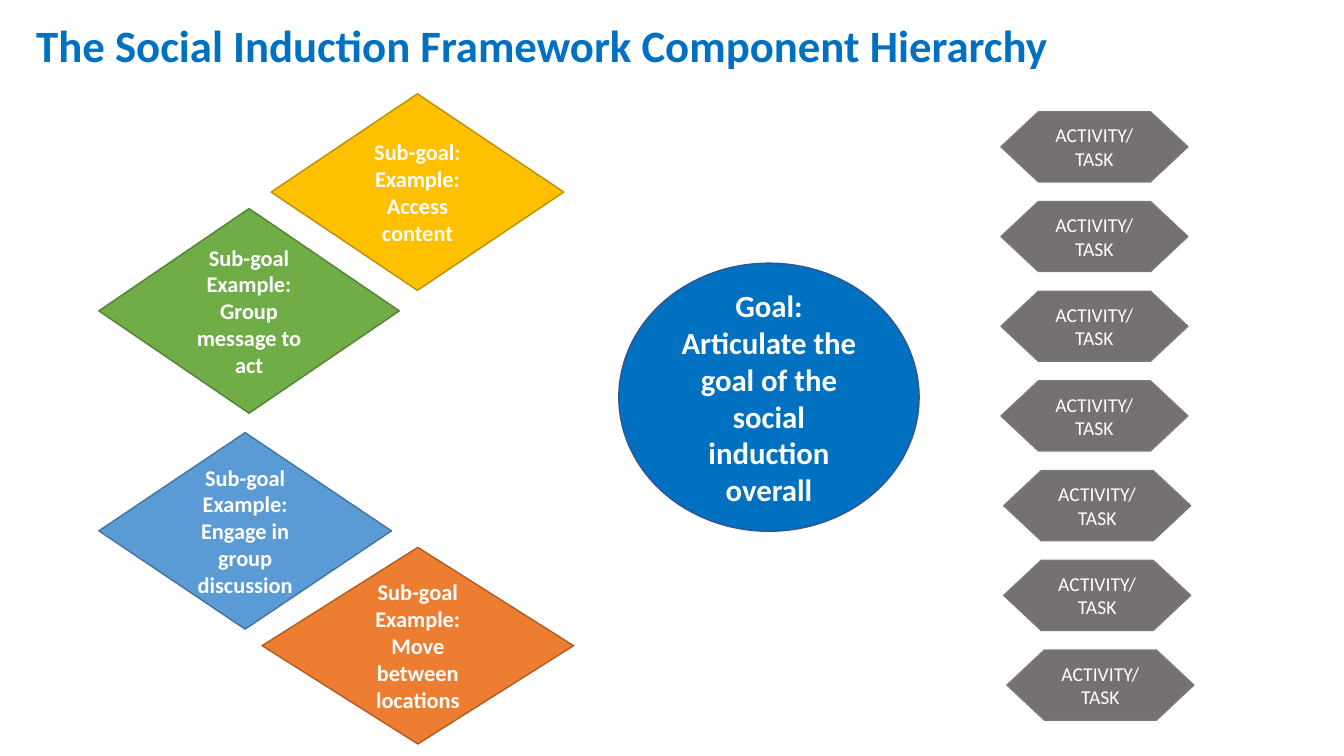
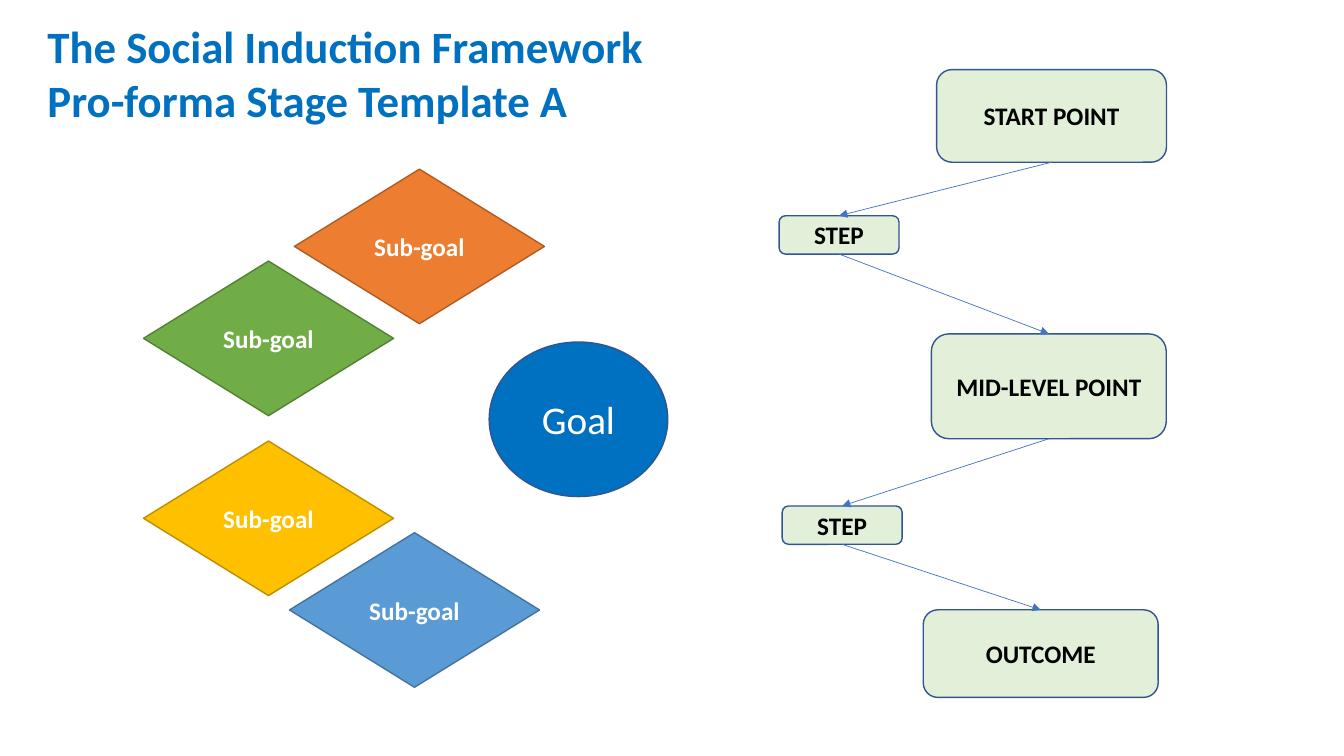
import pptx
import pptx.util
import pptx.dml.color
import pptx.enum.shapes
import pptx.enum.text
import pptx.oxml
import pptx.oxml.ns

Pt = pptx.util.Pt
RGB = pptx.dml.color.RGBColor
KIND = pptx.enum.shapes.MSO_SHAPE
ALIGN = pptx.enum.text.PP_ALIGN
ANCHOR = pptx.enum.text.MSO_ANCHOR

FONT = "Calibri"
WHITE = RGB(0xFF, 0xFF, 0xFF)
BLACK = RGB(0, 0, 0)
BLUE = RGB(0x00, 0x70, 0xC0)
ARROW = RGB(0x44, 0x72, 0xC4)

# Fill and outline pairs
GOAL = (BLUE, RGB(0x32, 0x54, 0x91))
GOLD = (RGB(0xFF, 0xC0, 0x00), RGB(0xBD, 0x8E, 0x00))
GREEN = (RGB(0x70, 0xAD, 0x47), RGB(0x53, 0x80, 0x35))
SKY = (RGB(0x5B, 0x9B, 0xD5), RGB(0x43, 0x73, 0x9E))
ORANGE = (RGB(0xED, 0x7D, 0x31), RGB(0xAF, 0x5C, 0x24))
GRAY = (RGB(0x76, 0x71, 0x71), RGB(0x7A, 0x7A, 0x7A))
MINT = (RGB(0xE2, 0xF0, 0xD9), RGB(0x32, 0x54, 0x91))


def write(shape, text, size, color, bold=True, align=ALIGN.CENTER):
    frame = shape.text_frame
    frame.word_wrap = True
    frame.text = text
    for para in frame.paragraphs:
        para.alignment = align
        for run in para.runs:
            run.font.name = FONT
            run.font.size = Pt(size)
            run.font.bold = bold
            run.font.color.rgb = color


def draw(slide, kind, box, pair, text, size, color=WHITE, bold=True):
    shape = slide.shapes.add_shape(kind, *[Pt(v) for v in box])
    shape.shadow.inherit = False
    shape.fill.solid()
    shape.fill.fore_color.rgb = pair[0]
    shape.line.color.rgb = pair[1]
    shape.line.width = Pt(1)
    shape.text_frame.vertical_anchor = ANCHOR.MIDDLE
    write(shape, text, size, color, bold)
    return shape


deck = pptx.Presentation()
deck.slide_width = Pt(960)
deck.slide_height = Pt(540)

# Titles
titles = [
    ((18.7, 9.4, 744, 46), "The Social Induction Framework Component Hierarchy"),
    ((26.8, 10, 444, 85), "The Social Induction Framework\nPro-forma Stage Template A"),
]
pages = []
for box, text in titles:
    page = deck.slides.add_slide(deck.slide_layouts[6])
    label = page.shapes.add_textbox(*[Pt(v) for v in box])
    write(label, text, 32, BLUE, align=ALIGN.LEFT)
    pages.append(page)
tree, stage = pages

# Slide 1: goal and sub-goals
draw(tree, KIND.OVAL, (442, 188, 214.5, 191.5), GOAL,
     "Goal:\nArticulate the goal of the social induction overall", 22)
goals = [
    ((193.7, 67, 209, 140.4), GOLD, "Sub-goal:\nExample: Access content"),
    ((70.6, 149, 214.6, 146.2), GREEN, "Sub-goal Example:\nGroup message to act"),
    ((70.6, 309, 209, 140.4), SKY, "Sub-goal Example:\nEngage in group discussion"),
    ((187.2, 391, 222.5, 140.4), ORANGE, "Sub-goal Example:\nMove between locations"),
]
for box, pair, text in goals:
    draw(tree, KIND.DIAMOND, box, pair, text, 16)

# Slide 1: column of tasks
for row, left in enumerate([715, 715, 715, 715, 717, 717, 719.3]):
    draw(tree, KIND.FLOWCHART_PREPARATION, (left, 79.9 + 64.08 * row, 133.5, 50),
         GRAY, "ACTIVITY/ TASK", 14, bold=False)

# Slide 2: goal and sub-goals
for left, top, pair in [(102.5, 315, GOLD), (102.5, 186.5, GREEN),
                        (206.8, 380.5, SKY), (210.3, 120.8, ORANGE)]:
    draw(stage, KIND.DIAMOND, (left, top, 178.6, 110.4), pair, "Sub-goal", 18)
draw(stage, KIND.OVAL, (349.4, 244.3, 127.6, 110.4), GOAL, "Goal", 28, bold=False)

# Slide 2: path from start to outcome
steps = [
    ((672, 49.7, 164.2, 66.2), "START POINT"),
    ((556.5, 154.1, 85.7, 27.4), "STEP"),
    ((665.3, 238.5, 167.8, 74.9), "MID-LEVEL POINT"),
    ((558.7, 361.4, 85.7, 27.4), "STEP"),
    ((659.5, 435.6, 167.8, 62.6), "OUTCOME"),
]
# The start box is slightly inset from the others
nodes = [draw(stage, KIND.ROUNDED_RECTANGLE, (left - 3 if text == "START POINT" else left,
                                               top, wide, high), MINT, text, 18, BLACK)
         for (left, top, wide, high), text in steps]

# Slide 2: arrows between neighbours
for first, second in zip(nodes, nodes[1:]):
    link = stage.shapes.add_connector(pptx.enum.shapes.MSO_CONNECTOR.STRAIGHT, 0, 0, 0, 0)
    link.begin_connect(first, 2)
    link.end_connect(second, 0)
    link.line.color.rgb = ARROW
    link.line.width = Pt(0.5)
    edge = link.line._get_or_add_ln()
    pptx.oxml.ns.qn("a:tailEnd")
    head = edge.makeelement(pptx.oxml.ns.qn("a:tailEnd"), {"type": "triangle"})
    edge.append(head)
    props = link._element.spPr
    props.append(props.makeelement(pptx.oxml.ns.qn("a:effectLst"), {}))

deck.save("out.pptx")
